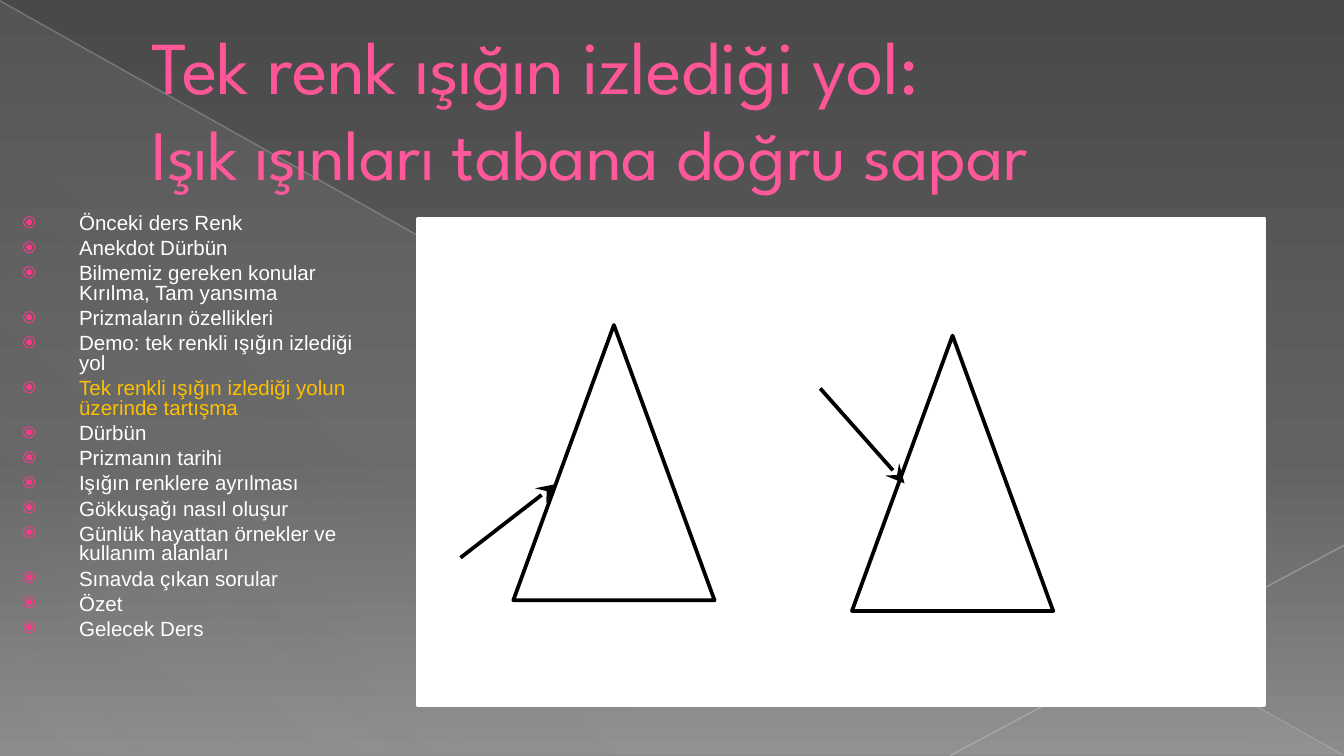
from lxml import etree
from pptx import Presentation
from pptx.dml.color import RGBColor
from pptx.enum import shapes, text
from pptx.oxml import ns
from pptx.util import Pt

# Content
TITLE = [("Tek renk ışığın izlediği yol: ", 40, "title"),
         ("Işık ışınları tabana doğru sapar", 37.8, "title_light")]
AGENDA = [
    "Önceki ders Renk",
    "Anekdot Dürbün",
    "Bilmemiz gereken konular Kırılma, Tam yansıma",
    "Prizmaların özellikleri",
    "Demo: tek renkli ışığın izlediği yol",
    "Tek renkli ışığın izlediği yolun üzerinde tartışma",
    "Dürbün",
    "Prizmanın tarihi",
    "Işığın renklere ayrılması",
    "Gökkuşağı nasıl oluşur",
    "Günlük hayattan örnekler ve kullanım alanları",
    "Sınavda çıkan sorular",
    "Özet",
    "Gelecek Ders",
]
CURRENT_TOPIC = 5
COLORS = {
    "title": "FF5698", "title_light": "FF599C", "bullet": "FF388C",
    "white": "FFFFFF", "current": "FFC000", "black": "000000",
    "ray_upper": "BEBEBE", "ray_lower": "C5C5C5",
}
# Gradient stops: position %, colour, opacity %
BACKDROP = [(0, "494949", 100), (60, "626262", 100), (100, "8B8B8B", 100)]
SHEEN = [(0, "D2D2D2", 10), (70, "D2D2D2", 8), (100, "D2D2D2", 1)]
# Background rays: start, end, colour, opacity %
RAYS = [((0, 0.5), (719.5, 404.5), "ray_upper", 35),
        ((720, 292.2), (509, 404.8), "ray_lower", 45)]
# Prisms: left and top of the triangle, light ray start and end
PRISM_SIZE = (107.8, 147.5)
PRISMS = [((275, 174.1), (246.7, 298.8), (297.6, 259.4)),
          ((456.4, 179.8), (439.4, 208.1), (484.6, 259))]


def color(name):
    return RGBColor.from_string(COLORS[name])


def add_xml(parent, tag, **attributes):
    return etree.SubElement(parent, ns.qn(tag), attributes)


def paint_gradient(fill, owner, stops, angle):
    fill.gradient()
    gradient = owner.find(".//" + ns.qn("a:gradFill"))
    stop_list = gradient.find(ns.qn("a:gsLst"))
    for old_stop in list(stop_list):
        stop_list.remove(old_stop)
    for position, shade, opacity in stops:
        stop = add_xml(stop_list, "a:gs", pos=str(position * 1000))
        tint = add_xml(stop, "a:srgbClr", val=shade)
        add_xml(tint, "a:alpha", val=str(opacity * 1000))
    gradient.find(ns.qn("a:lin")).set("ang", str(angle * 60000))


def add_shape(slide, kind, left, top, width, height, outline=None):
    shape = slide.shapes.add_shape(kind, Pt(left), Pt(top), Pt(width), Pt(height))
    shape.shadow.inherit = False
    if outline:
        shape.fill.solid()
        shape.fill.fore_color.rgb = color("white")
        shape.line.color.rgb = color(outline)
        shape.line.width = Pt(2)
    else:
        shape.line.fill.background()
    return shape


def add_line(slide, start, end, shade, width, opacity=100, arrow=False):
    line = slide.shapes.add_connector(
        shapes.MSO_CONNECTOR.STRAIGHT, *(Pt(value) for value in start + end))
    line.line.color.rgb = color(shade)
    line.line.width = Pt(width)
    properties = line.element.spPr
    if opacity < 100:
        tint = properties.find(".//" + ns.qn("a:srgbClr"))
        add_xml(tint, "a:alpha", val=str(opacity * 1000))
    if arrow:
        add_xml(properties.find(ns.qn("a:ln")), "a:tailEnd",
                type="stealth", w="lg", len="lg")
    add_xml(properties, "a:effectLst")


def add_text_frame(slide, left, top, width, height):
    frame = slide.shapes.add_textbox(Pt(left), Pt(top), Pt(width), Pt(height)).text_frame
    frame.word_wrap = True
    return frame


def add_run(paragraph, words, font, size, shade):
    run = paragraph.add_run()
    run.text = words
    run.font.name = font
    run.font.size = Pt(size)
    run.font.color.rgb = color(shade)


def indent(paragraph, left, first=0):
    properties = paragraph._p.get_or_add_pPr()
    properties.set("marL", str(Pt(left)))
    properties.set("indent", str(Pt(first)))
    return properties


deck = Presentation()
deck.slide_width, deck.slide_height = Pt(720), Pt(405)
slide = deck.slides.add_slide(deck.slide_layouts[6])

# Background with sheen and rays
paint_gradient(slide.background.fill, slide.element, BACKDROP, 90)
sheen = add_shape(slide, shapes.MSO_SHAPE.RIGHT_TRIANGLE, 0.5, 0.5, 719, 404)
paint_gradient(sheen.fill, sheen.element, SHEEN, 133)
for start, end, shade, opacity in RAYS:
    add_line(slide, start, end, shade, 0.75, opacity)

# Title
title = add_text_frame(slide, 36, 16, 648, 83)
title.vertical_anchor = text.MSO_ANCHOR.MIDDLE
heading = title.paragraphs[0]
indent(heading, 38)
for number, (words, size, shade) in enumerate(TITLE):
    if number:
        heading.add_line_break()
    add_run(heading, words, "League Spartan", size, shade)

# Agenda with the current topic highlighted
agenda = add_text_frame(slide, 0, 111.6, 201.6, 270)
for number, topic in enumerate(AGENDA):
    item = agenda.add_paragraph() if number else agenda.paragraphs[0]
    item.line_spacing = 0.8
    item.space_before = Pt(2.9)
    bullet = indent(item, 35.3, -30.2)
    add_xml(add_xml(bullet, "a:buClr"), "a:srgbClr", val=COLORS["bullet"])
    add_xml(bullet, "a:buSzPct", val="81000")
    add_xml(bullet, "a:buFont", typeface="Arial")
    add_xml(bullet, "a:buChar", char="⦿")
    add_run(item, topic, "Arial", 11, "current" if number == CURRENT_TOPIC else "white")

# Drawing panel with prisms and incoming light
add_shape(slide, shapes.MSO_SHAPE.RECTANGLE, 223.9, 117.4, 453.6, 260.6, "white")
for corner, start, end in PRISMS:
    add_shape(slide, shapes.MSO_SHAPE.ISOSCELES_TRIANGLE, *corner, *PRISM_SIZE, "black")
    add_line(slide, start, end, "black", 2, arrow=True)

deck.save("out.pptx")
